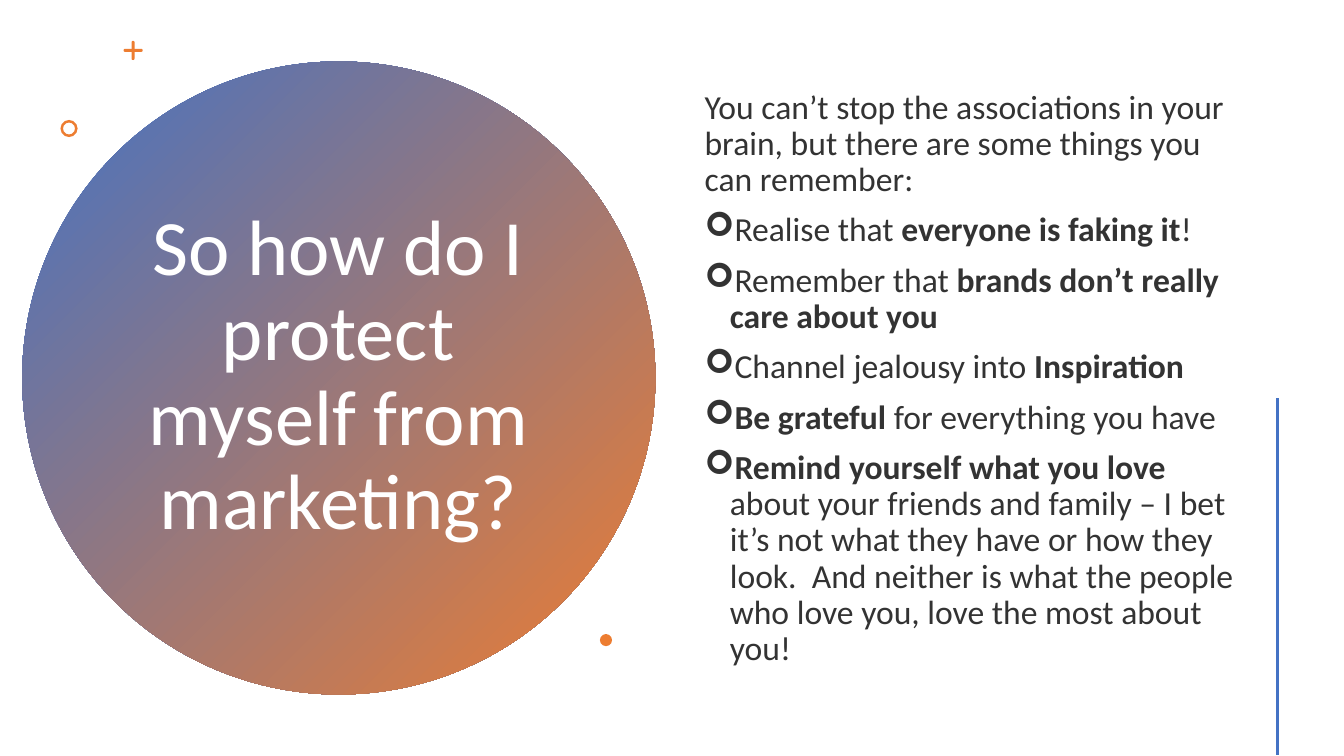
from lxml.etree import SubElement
from pptx import Presentation
from pptx.dml.color import RGBColor
from pptx.enum.shapes import MSO_CONNECTOR as Connector, MSO_SHAPE as Shape
from pptx.enum.text import MSO_ANCHOR as Anchor, MSO_AUTO_SIZE as AutoSize, PP_ALIGN as Align
from pptx.oxml.ns import qn
from pptx.util import Inches, Pt

BLUE, ORANGE, WHITE, DARK = "4472C4", "ED7D31", "FFFFFF", "333333"
FONT = "Calibri"
INTRO = ("You can’t stop the associations in your brain, "
         "but there are some things you can remember:")
# Each tip is a list of (text, bold) spans.
TIPS = [
    [("Realise that ", False), ("everyone is faking it", True), ("!", False)],
    [("Remember that ", False), ("brands don’t really care about you", True)],
    [("Channel jealousy into ", False), ("Inspiration", True)],
    [("Be grateful ", True), ("for everything you have", False)],
    [("Remind yourself what you love ", True),
     ("about your friends and family – I bet it’s not what they have or how "
      "they look.  And neither is what the people who love you, love the most "
      "about you!", False)],
]


def rgb(value):
    return RGBColor.from_string(value)


def add_filled(page, kind, left, top, width, height, color=ORANGE):
    shape = page.shapes.add_shape(kind, Inches(left), Inches(top),
                                  Inches(width), Inches(height))
    shape.shadow.inherit = False
    shape.fill.solid()
    shape.fill.fore_color.rgb = rgb(color)
    shape.line.fill.background()
    return shape


def add_span(para, text, size, color, bold=False):
    span = para.add_run()
    span.text = text
    span.font.name = FONT
    span.font.size = Pt(size)
    span.font.bold = bold
    span.font.color.rgb = rgb(color)


def set_frame(box, left, top, width, height):
    """Place a text shape and centre its wrapped text vertically."""
    box.left, box.top = Inches(left), Inches(top)
    box.width, box.height = Inches(width), Inches(height)
    frame = box.text_frame
    frame.word_wrap = True
    frame.auto_size = AutoSize.NONE
    frame.vertical_anchor = Anchor.MIDDLE
    return frame


def add_bullet(para, symbol="➢", indent=0.25):
    props = para._p.get_or_add_pPr()
    props.set("marL", str(Inches(indent)))
    props.set("indent", str(-Inches(indent)))
    SubElement(props, qn("a:buFont")).set("typeface", "Wingdings")
    SubElement(props, qn("a:buChar")).set("char", symbol)


def add_title_circle(page):
    circle = add_filled(page, Shape.OVAL, 0.22, 0.61, 6.28, 6.28)
    circle.fill.gradient()
    circle.fill.gradient_angle = 315
    for stop, color in zip(circle.fill.gradient_stops, (BLUE, ORANGE)):
        stop.color.rgb = rgb(color)
    title = page.shapes.title
    title.element.addprevious(circle.element)
    para = set_frame(title, 1.36, 1.41, 3.99, 4.67).paragraphs[0]
    para.alignment = Align.CENTER
    para.line_spacing = 0.9
    add_span(para, "So how do I protect myself from marketing?", 56, WHITE)


def add_plus(page, center_x, center_y, size=0.19, thickness=0.03):
    for width, height in ((size, thickness), (thickness, size)):
        bar = add_filled(page, Shape.ROUNDED_RECTANGLE, center_x - width / 2,
                         center_y - height / 2, width, height)
        bar.adjustments[0] = 0.5


def add_advice(page):
    box = page.shapes.add_textbox(0, 0, 0, 0)
    frame = set_frame(box, 6.89, 0.57, 5.45, 6.38)
    intro = frame.paragraphs[0]
    intro.line_spacing = 0.9
    add_span(intro, INTRO, 24, DARK)
    for tip in TIPS:
        para = frame.add_paragraph()
        para.line_spacing = 0.9
        para.space_before = Pt(10)
        add_bullet(para)
        for text, bold in tip:
            add_span(para, text, 24, DARK, bold)


def add_side_line(page):
    line = page.shapes.add_connector(Connector.STRAIGHT, Inches(12.67), Inches(3.95),
                                     Inches(12.67), Inches(7.49))
    line.line.color.rgb = rgb(BLUE)
    line.line.width = Pt(2)
    SubElement(line.element.spPr, qn("a:effectLst"))


def main():
    deck = Presentation()
    deck.slide_width, deck.slide_height = Inches(13.33), Inches(7.5)
    page = deck.slides.add_slide(deck.slide_layouts[5])
    add_title_circle(page)
    add_plus(page, 1.32, 0.5)
    ring = add_filled(page, Shape.DONUT, 0.6, 1.19, 0.17, 0.17)
    ring.adjustments[0] = 0.15
    add_advice(page)
    add_filled(page, Shape.OVAL, 5.95, 6.29, 0.12, 0.12)
    add_side_line(page)
    deck.save("out.pptx")


if __name__ == "__main__":
    main()
